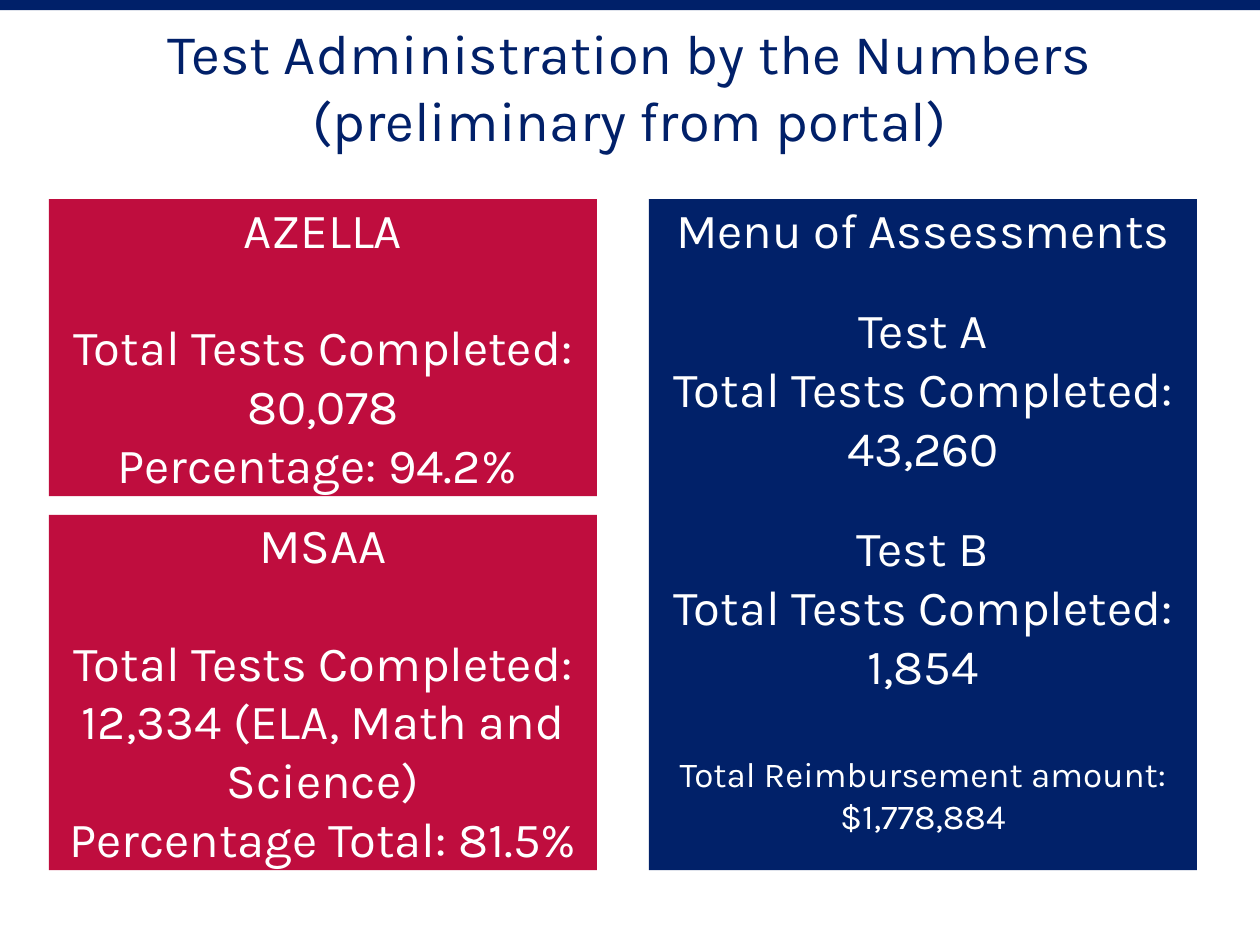
from pptx import Presentation
from pptx.dml.color import RGBColor
from pptx.enum.shapes import MSO_SHAPE
from pptx.enum.text import MSO_ANCHOR, PP_ALIGN
from pptx.util import Pt

NAVY = RGBColor(0x01, 0x21, 0x69)
BAR_NAVY = RGBColor(0x00, 0x20, 0x69)
TITLE_NAVY = RGBColor(0x01, 0x20, 0x69)
RED = RGBColor(0xBF, 0x0D, 0x3E)
WHITE = RGBColor(0xFF, 0xFF, 0xFF)
FONT = "Karla"
SLIDE_WIDTH, SLIDE_HEIGHT = 720, 540

TITLE = "Test Administration by the Numbers (preliminary from portal)"
COMPLETED = "Total Tests Completed:"
WIDE_GAP, NARROW_GAP = 33.4, 23.7

AZELLA = [
    ("AZELLA", 28, 0),
    (COMPLETED, 28, WIDE_GAP),
    ("80,078", 28, 0),
    ("Percentage: 94.2% ", 28, 0),
]
MSAA = [
    ("MSAA", 28, 0),
    (COMPLETED, 28, WIDE_GAP),
    ("12,334 (ELA, Math and Science)", 28, 0),
    ("Percentage Total: 81.5%", 28, 0),
]
MENU = [
    ("Menu of Assessments", 28, 0),
    ("Test A", 28, NARROW_GAP),
    (COMPLETED, 28, 0),
    ("43,260", 28, 0),
    ("Test B", 28, NARROW_GAP),
    (COMPLETED, 28, 0),
    ("1,854", 28, 0),
    ("Total Reimbursement amount:", 20, WIDE_GAP),
    ("$1,778,884", 20, 0),
]

LEFT, RIGHT, CARD_WIDTH = 27.9, 370.8, 313.2
TOP, BOTTOM = 113.8, 497.3
AZELLA_HEIGHT, CARD_GAP = 169.7, 10.7
MSAA_TOP = TOP + AZELLA_HEIGHT + CARD_GAP
CARDS = [
    (AZELLA, RED, LEFT, TOP, AZELLA_HEIGHT),
    (MSAA, RED, LEFT, MSAA_TOP, BOTTOM - MSAA_TOP),
    (MENU, NAVY, RIGHT, TOP, BOTTOM - TOP),
]


def add_block(slide, left, top, width, height, fill):
    block = slide.shapes.add_shape(
        MSO_SHAPE.RECTANGLE, Pt(left), Pt(top), Pt(width), Pt(height))
    block.shadow.inherit = False
    block.fill.solid()
    block.fill.fore_color.rgb = fill
    block.line.fill.background()
    return block


def write(frame, lines, color):
    frame.word_wrap = True
    frame.vertical_anchor = MSO_ANCHOR.TOP
    frame.margin_left = frame.margin_right = Pt(0)
    frame.margin_top = frame.margin_bottom = Pt(0)
    for index, (text, size, gap) in enumerate(lines):
        paragraph = frame.add_paragraph() if index else frame.paragraphs[0]
        paragraph.text = text
        paragraph.alignment = PP_ALIGN.CENTER
        if gap:
            paragraph.space_before = Pt(gap)
        paragraph.font.name = FONT
        paragraph.font.size = Pt(size)
        paragraph.font.color.rgb = color


def main():
    deck = Presentation()
    deck.slide_width, deck.slide_height = Pt(SLIDE_WIDTH), Pt(SLIDE_HEIGHT)
    slide = deck.slides.add_slide(deck.slide_layouts[6])
    add_block(slide, 0, 0, SLIDE_WIDTH, 5.8, BAR_NAVY)
    title = slide.shapes.add_textbox(Pt(81), Pt(10.4), Pt(558), Pt(78))
    write(title.text_frame, [(TITLE, 32, 0)], TITLE_NAVY)
    for lines, fill, left, top, height in CARDS:
        card = add_block(slide, left, top, CARD_WIDTH, height, fill)
        write(card.text_frame, lines, WHITE)
    deck.save("out.pptx")


if __name__ == "__main__":
    main()
